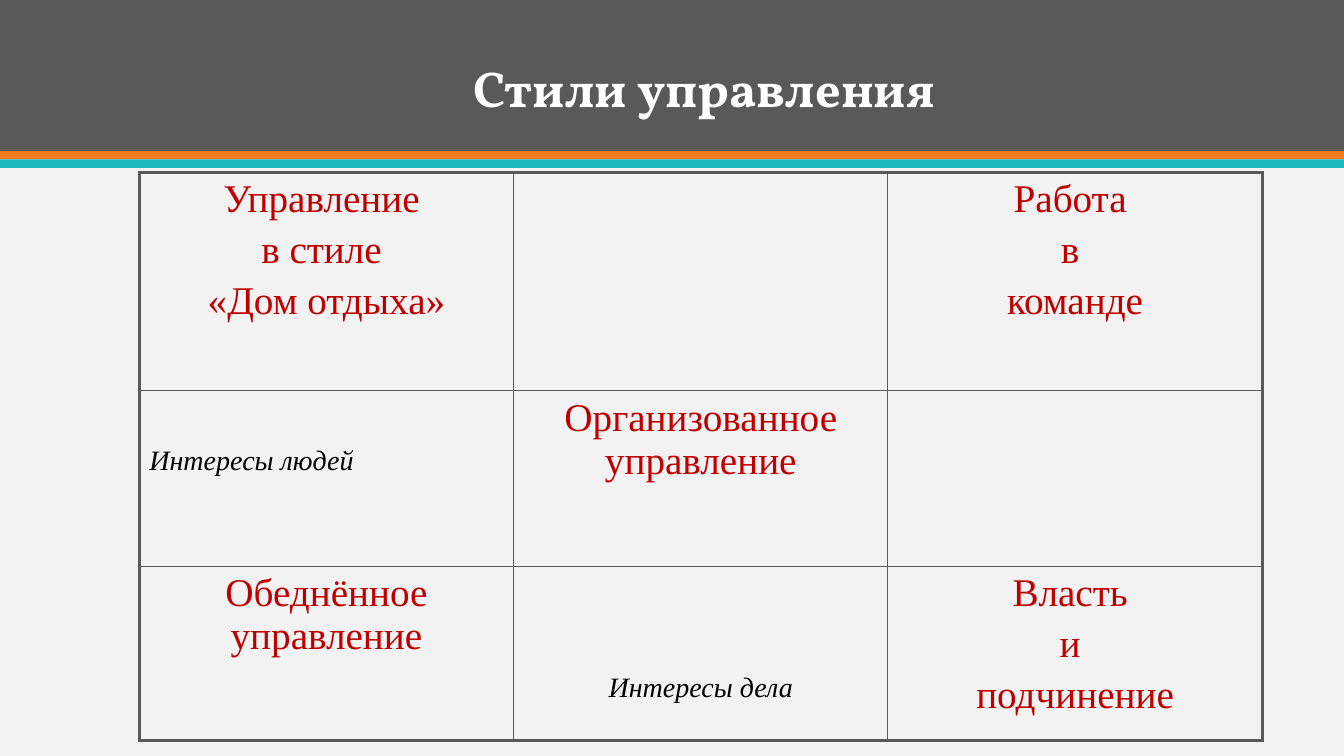
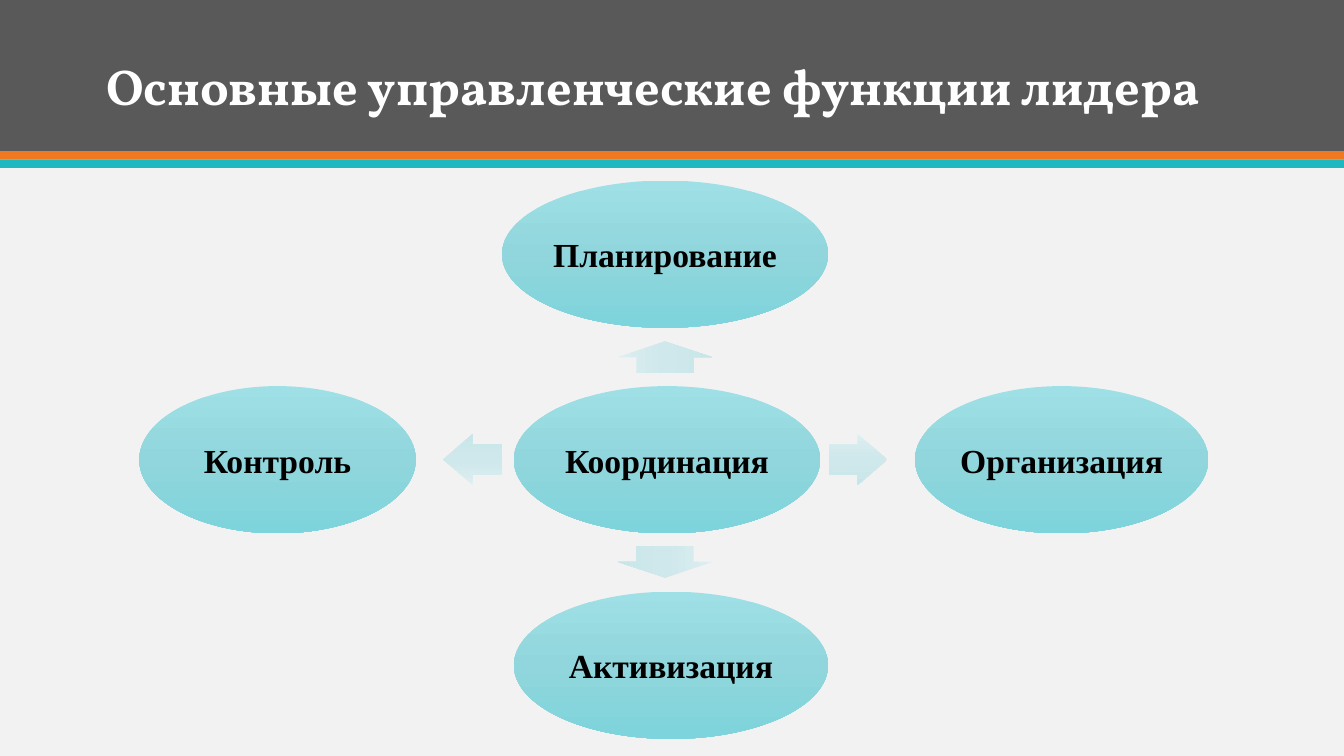
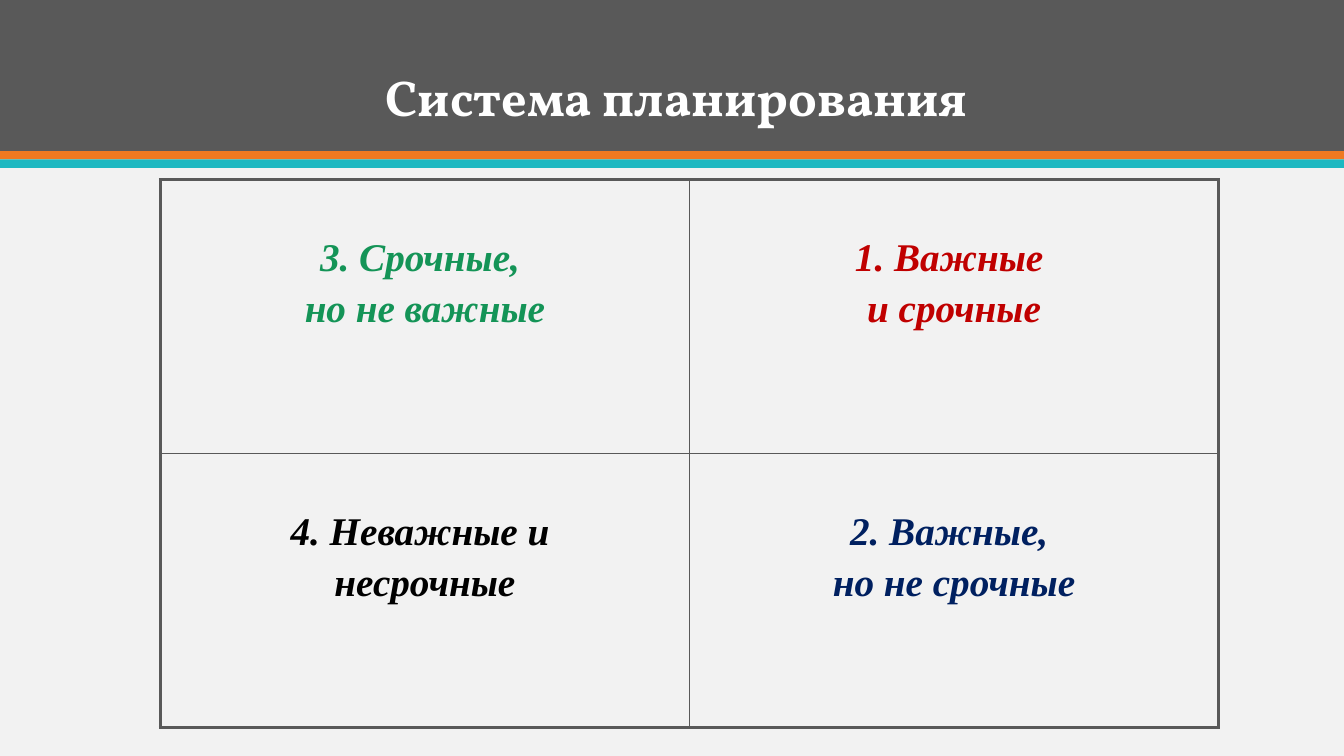
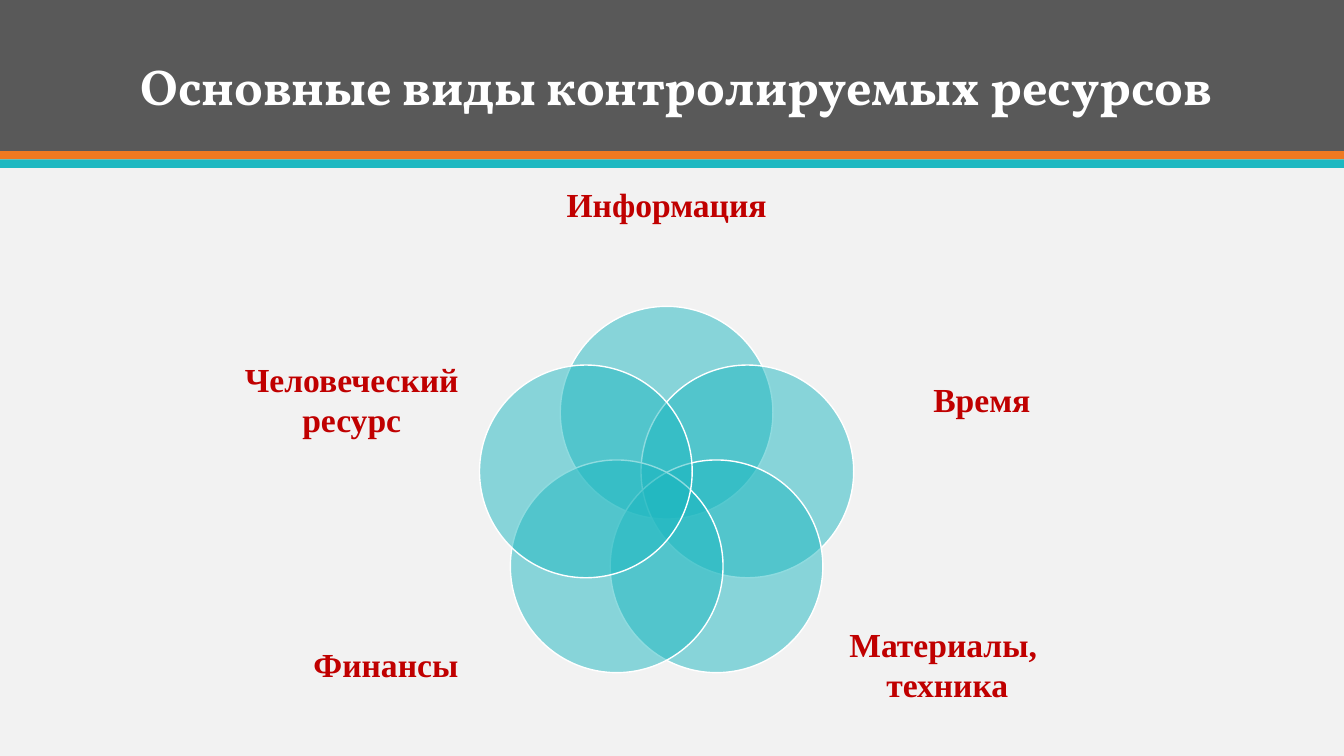
import copy
import math
from dataclasses import dataclass
from typing import Any

import pptx
import pptx.dml.color
import pptx.enum.shapes
import pptx.enum.text
import pptx.oxml
import pptx.oxml.ns
import pptx.util

Cm = pptx.util.Cm
Pt = pptx.util.Pt
RGBColor = pptx.dml.color.RGBColor
Align = pptx.enum.text.PP_ALIGN
Anchor = pptx.enum.text.MSO_ANCHOR
Preset = pptx.enum.shapes.MSO_SHAPE

BLACK = RGBColor(0x00, 0x00, 0x00)
WHITE = RGBColor(0xFF, 0xFF, 0xFF)
PAPER = RGBColor(0xF2, 0xF2, 0xF2)
GRAY = RGBColor(0x59, 0x59, 0x59)
ORANGE = RGBColor(0xEF, 0x79, 0x20)
TEAL = RGBColor(0x1E, 0xB8, 0xC1)
RED = RGBColor(0xC0, 0x00, 0x00)
GREEN = RGBColor(0x14, 0x94, 0x57)
NAVY = RGBColor(0x00, 0x20, 0x60)
OVAL_SHADES = (RGBColor(0x9E, 0xE0, 0xE6), RGBColor(0x91, 0xD6, 0xDC), RGBColor(0x7D, 0xD4, 0xDC))
ARROW_SHADES = (RGBColor(0xDC, 0xEE, 0xF1), RGBColor(0xCF, 0xE8, 0xEB), RGBColor(0xC8, 0xE6, 0xEA))

SLIDE_WIDTH, SLIDE_HEIGHT = 33.87, 19.05
TITLE_FONT = {"name": "Vollkorn", "size": Pt(36), "bold": True}
STYLE_FONT = {"name": "Times New Roman", "size": Pt(28), "bold": False, "italic": False}
AXIS_FONT = STYLE_FONT | {"size": Pt(20), "italic": True}
TASK_FONT = STYLE_FONT | {"bold": True, "italic": True}
LABEL_FONT = {"name": "Times New Roman", "size": Pt(24), "bold": True}
NO_MARGINS = {f"margin_{side}": 0 for side in ("left", "top", "right", "bottom")}
CELL_PADDING = 0.13
OUTER_BORDER, INNER_BORDER = 2.25, 1


@dataclass(frozen=True)
class Box:
    """A rectangle in centimetres."""
    left: float
    top: float
    width: float
    height: float

    def lengths(self) -> tuple[Any, ...]:
        return tuple(Cm(value) for value in (self.left, self.top, self.width, self.height))


@dataclass(frozen=True)
class Band:
    top: float
    height: float
    color: RGBColor


@dataclass(frozen=True)
class CellText:
    lines: tuple[str, ...] = ()
    color: RGBColor = RED
    font: Any = None
    top_margin: float = CELL_PADDING
    alignment: Any = Align.CENTER


@dataclass(frozen=True)
class Function:
    """A leadership function; row counts from the top oval."""
    name: str
    left: float
    row: int
    width: float


@dataclass(frozen=True)
class Arrow:
    center_x: float
    center_y: float
    length: float
    breadth: float
    rotation: int
    head: float


@dataclass(frozen=True)
class Resource:
    lines: tuple[str, ...]
    label: Box


BANDS = (Band(0, 3.81, GRAY), Band(3.81, 0.21, ORANGE), Band(4.02, 0.21, TEAL))

EMPTY = CellText()
STYLE_ROWS = (
    (CellText(("Управление ", "в стиле ", "«Дом отдыха»"), font=STYLE_FONT),
     EMPTY,
     CellText(("Работа ", "в ", "команде"), font=STYLE_FONT)),
    (CellText(("Интересы людей",), BLACK, AXIS_FONT, 1.37, Align.LEFT),
     CellText(("Организованное управление",), font=STYLE_FONT),
     EMPTY),
    (CellText(("Обеднённое управление",), font=STYLE_FONT),
     CellText(("Интересы дела",), BLACK, AXIS_FONT, 2.68),
     CellText(("Власть ", "и ", "подчинение"), font=STYLE_FONT)),
)


def task(color: RGBColor, *lines: str) -> CellText:
    return CellText(lines, color, TASK_FONT, 1.43)


TASK_ROWS = (
    (task(GREEN, "3. Срочные, ", "но не важные"), task(RED, "1. Важные ", "и срочные")),
    (task(BLACK, "4. Неважные и ", "несрочные"), task(NAVY, "2. Важные, ", "но не срочные")),
)

OVAL_TOP, OVAL_HEIGHT, OVAL_STEP = 4.55, 3.71, 5.18
FUNCTIONS = (
    Function("Координация", 12.95, 1, 7.72),
    Function("Планирование", 12.65, 0, 8.22),
    Function("Организация", 23.06, 1, 7.39),
    Function("Активизация", 12.95, 2, 7.92),
    Function("Контроль", 3.51, 1, 6.97),
)
ARROWS = (
    Arrow(16.76, 9.0, 0.79, 2.38, 270, 0.5),
    Arrow(21.62, 11.58, 1.48, 1.28, 0, 0.58),
    Arrow(16.76, 14.16, 0.79, 2.38, 90, 0.5),
    Arrow(11.91, 11.58, 1.48, 1.28, 180, 0.58),
)

RING_X, RING_Y, RING_RADIUS, CIRCLE_SIZE = 16.8, 12.54, 2.14, 5.36
RESOURCES = (
    Resource(("Информация",), Box(13.69, 3.35, 6.22, 3.61)),
    Resource(("Время",), Box(21.95, 8.1, 5.59, 3.91)),
    Resource(("Материалы, ", "техника"), Box(21.08, 14.78, 5.59, 3.91)),
    Resource(("Финансы",), Box(6.93, 14.78, 5.59, 3.91)),
    Resource(("Человеческий ", "ресурс"), Box(6.07, 8.1, 5.59, 3.91)),
)


def set_values(target: Any, values: dict[str, Any]) -> None:
    for name, value in values.items():
        setattr(target, name, value)


def write_lines(frame: Any, lines: tuple[str, ...], font: dict[str, Any], color: RGBColor,
                **paragraph_format: Any) -> None:
    for index, line in enumerate(lines):
        para = frame.add_paragraph() if index else frame.paragraphs[0]
        set_values(para, {"alignment": Align.CENTER} | paragraph_format)
        span = para.add_run()
        span.text = line
        set_values(span.font, font)
        span.font.color.rgb = color


def add_plain_shape(page: Any, preset: Any, box: Box) -> Any:
    shape = page.shapes.add_shape(preset, *box.lengths())
    shape.shadow.inherit = False
    shape.line.fill.background()
    return shape


def fill_gradient(shape: Any, shades: tuple[RGBColor, ...]) -> None:
    """Fill from top to bottom with evenly spaced shades."""
    shape.fill.gradient()
    shape.fill.gradient_angle = 270
    stop_list = shape.element.xpath(".//a:gsLst")[0]
    while len(stop_list) < len(shades):
        stop_list.append(copy.deepcopy(stop_list[0]))
    for index, (stop, shade) in enumerate(zip(shape.fill.gradient_stops, shades)):
        stop.color.rgb = shade
        stop.position = index / (len(shades) - 1)


def style_master(deck: Any, page: Any) -> None:
    """Set the background and move the bands, drawn on page, to the master."""
    background = deck.slide_master.background.fill
    background.solid()
    background.fore_color.rgb = PAPER
    for index, band in enumerate(BANDS):
        shape = add_plain_shape(page, Preset.RECTANGLE, Box(0, band.top, SLIDE_WIDTH, band.height))
        shape.fill.solid()
        shape.fill.fore_color.rgb = band.color
        shape.element.xpath(".//p:cNvPr")[0].set("id", str(100 + index))
        deck.slide_master.shapes.element.insert(2 + index, shape.element)


def add_page(deck: Any, title: str, box: Box) -> Any:
    page = deck.slides.add_slide(deck.slide_layouts.get_by_name("Title Only"))
    heading = page.shapes.title
    set_values(heading, dict(zip(("left", "top", "width", "height"), box.lengths())))
    set_values(heading.text_frame, {
        "vertical_anchor": Anchor.BOTTOM,
        "word_wrap": True,
        "auto_size": pptx.enum.text.MSO_AUTO_SIZE.NONE,
    })
    write_lines(heading.text_frame, (title,), TITLE_FONT, WHITE, line_spacing=0.9)
    return page


def add_border(properties: Any, side: str, points: float) -> None:
    properties.append(pptx.oxml.parse_xml(
        f'<a:ln{side} {pptx.oxml.ns.nsdecls("a")} w="{Pt(points)}">'
        f'<a:solidFill><a:srgbClr val="{GRAY}"/></a:solidFill></a:ln{side}>'))


def add_grid(page: Any, box: Box, row_heights: tuple[float, ...],
             rows: tuple[tuple[CellText, ...], ...]) -> None:
    """Draw a table with equal columns, a thick frame and thin inner lines."""
    last_row, last_column = len(rows) - 1, len(rows[0]) - 1
    holder = page.shapes.add_table(len(rows), len(rows[0]), *box.lengths())
    table = holder.table
    set_values(table, {"first_row": False, "horz_banding": False})
    for table_row, height in zip(table.rows, row_heights):
        table_row.height = Cm(height)
    cell_elements = iter(holder.element.xpath(".//a:tc"))
    for row, texts in enumerate(rows):
        for column, text in enumerate(texts):
            properties = next(cell_elements).get_or_add_tcPr()
            on_frame = {"L": column == 0, "R": column == last_column,
                        "T": row == 0, "B": row == last_row}
            for side, outer in on_frame.items():
                add_border(properties, side, OUTER_BORDER if outer else INNER_BORDER)
            cell = table.cell(row, column)
            cell.fill.background()
            cell.margin_top = Cm(text.top_margin)
            write_lines(cell.text_frame, text.lines, text.font, text.color,
                        alignment=text.alignment, space_before=Pt(5.6))


def add_function(page: Any, function: Function) -> None:
    top = OVAL_TOP + function.row * OVAL_STEP
    oval = add_plain_shape(page, Preset.OVAL, Box(function.left, top, function.width, OVAL_HEIGHT))
    fill_gradient(oval, OVAL_SHADES)
    set_values(oval.text_frame, NO_MARGINS | {"vertical_anchor": Anchor.MIDDLE, "word_wrap": False})
    write_lines(oval.text_frame, (function.name,), LABEL_FONT, BLACK)


def add_arrow(page: Any, arrow: Arrow) -> None:
    box = Box(arrow.center_x - arrow.length / 2, arrow.center_y - arrow.breadth / 2,
              arrow.length, arrow.breadth)
    shape = add_plain_shape(page, Preset.RIGHT_ARROW, box)
    shape.rotation = arrow.rotation
    shape.adjustments[0] = 0.6
    shape.adjustments[1] = arrow.head
    fill_gradient(shape, ARROW_SHADES)


def add_resource(page: Any, resource: Resource, angle: float) -> None:
    """Draw a half-transparent circle at a clockwise angle on the ring, and its label."""
    left = RING_X + RING_RADIUS * math.sin(angle) - CIRCLE_SIZE / 2
    top = RING_Y - RING_RADIUS * math.cos(angle) - CIRCLE_SIZE / 2
    circle = add_plain_shape(page, Preset.OVAL, Box(left, top, CIRCLE_SIZE, CIRCLE_SIZE))
    circle.fill.solid()
    circle.fill.fore_color.rgb = TEAL
    circle.element.xpath("./p:spPr/a:solidFill/a:srgbClr")[0].append(
        pptx.oxml.parse_xml(f'<a:alpha {pptx.oxml.ns.nsdecls("a")} val="50000"/>'))
    circle.line.color.rgb = WHITE
    circle.line.width = Pt(1)
    label = page.shapes.add_textbox(*resource.label.lengths())
    set_values(label.text_frame, NO_MARGINS | {"vertical_anchor": Anchor.MIDDLE, "word_wrap": True})
    write_lines(label.text_frame, resource.lines, LABEL_FONT, RED)


def main() -> None:
    deck = pptx.Presentation()
    deck.slide_width, deck.slide_height = Cm(SLIDE_WIDTH), Cm(SLIDE_HEIGHT)

    styles = add_page(deck, "Стили управления", Box(6.73, 0.66, 22.05, 2.46))
    style_master(deck, styles)
    add_grid(styles, Box(3.51, 4.34, 28.3, 14.32), (5.51, 4.42, 4.39), STYLE_ROWS)

    functions = add_page(deck, "Основные управленческие функции лидера", Box(1.7, 0.71, 29.51, 2.34))
    for function in FUNCTIONS:
        add_function(functions, function)
    for arrow in ARROWS:
        add_arrow(functions, arrow)

    planning = add_page(deck, "Система планирования", Box(5.33, 0.71, 23.44, 2.62))
    add_grid(planning, Box(4.04, 4.53, 26.67, 13.8), (6.9, 6.9), TASK_ROWS)

    resources = add_page(deck, "Основные виды контролируемых ресурсов", Box(2.79, 0.38, 28.52, 2.69))
    for index, resource in enumerate(RESOURCES):
        add_resource(resources, resource, index * math.tau / len(RESOURCES))

    deck.save("out.pptx")


if __name__ == "__main__":
    main()
